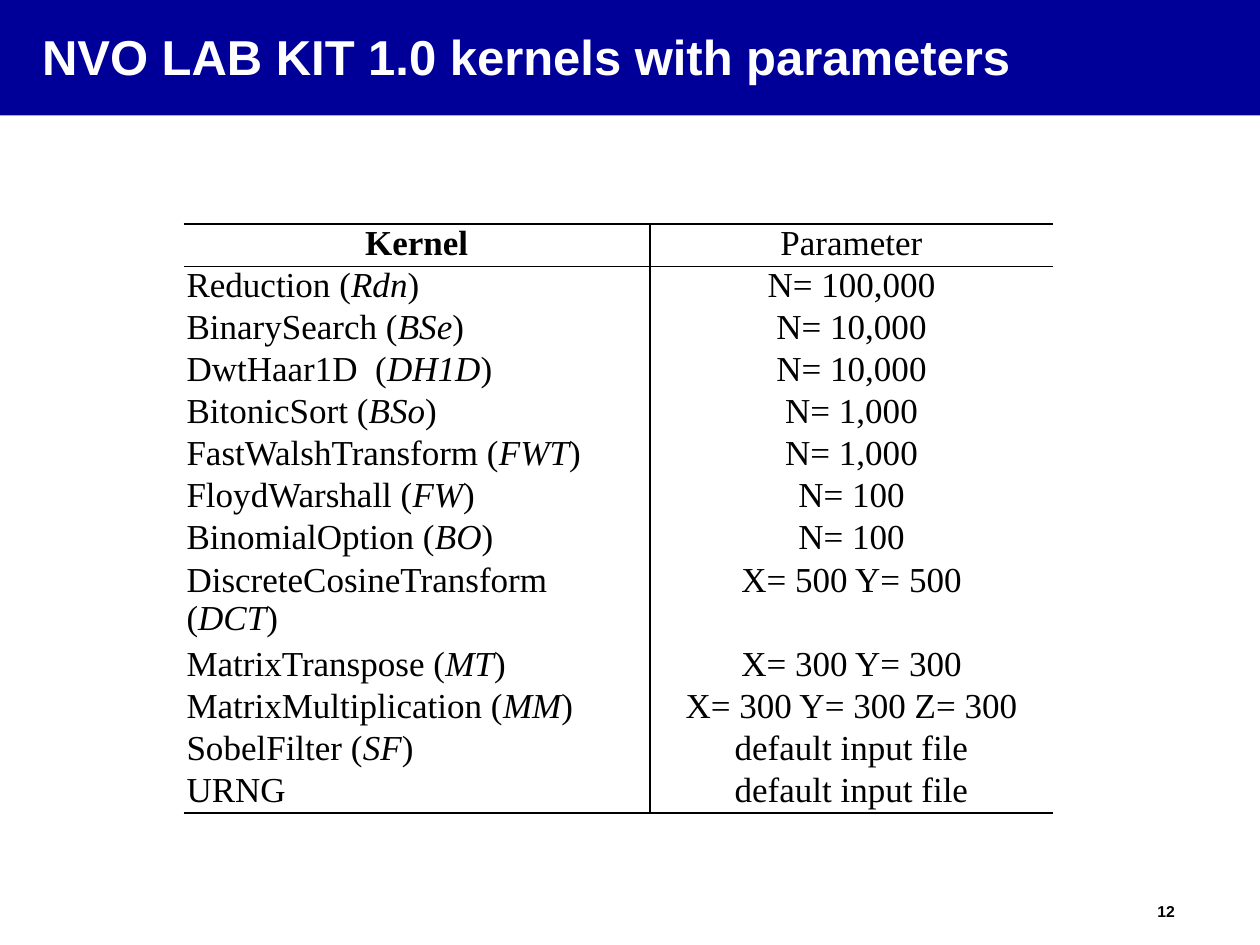
from dataclasses import dataclass

import pptx
import pptx.dml.color
import pptx.enum.shapes
import pptx.enum.text
import pptx.oxml.ns
import pptx.util
from lxml import etree
from pptx.util import Cm

ALIGN = pptx.enum.text.PP_ALIGN
MIDDLE = pptx.enum.text.MSO_ANCHOR.MIDDLE


@dataclass(frozen=True)
class Theme:
    navy: str = "000099"
    white: str = "FFFFFF"
    black: str = "000000"
    sans: str = "Arial"
    serif: str = "Times New Roman"
    title_size: float = 28
    table_size: float = 20
    number_size: float = 9
    thin: float = 1
    thick: float = 1.5


THEME = Theme()

HEADER = ("Kernel", "Parameter")
# Kernel name with its trailing gap, abbreviation, parameter
KERNELS = [
    ("Reduction ", "Rdn", "N= 100,000"),
    ("BinarySearch ", "BSe", "N= 10,000"),
    ("DwtHaar1D  ", "DH1D", "N= 10,000"),
    ("BitonicSort ", "BSo", "N= 1,000"),
    ("FastWalshTransform ", "FWT", "N= 1,000"),
    ("FloydWarshall ", "FW", "N= 100"),
    ("BinomialOption ", "BO", "N= 100"),
    ("DiscreteCosineTransform ", "DCT", "X= 500 Y= 500"),
    ("MatrixTranspose ", "MT", "X= 300 Y= 300"),
    ("MatrixMultiplication ", "MM", "X= 300 Y= 300 Z= 300"),
    ("SobelFilter ", "SF", "default input file"),
    ("URNG", "", "default input file"),
]
TWO_LINE_KERNEL = "DCT"


def rgb(value):
    return pptx.dml.color.RGBColor.from_string(value)


def write(para, text, *, size, font, color=THEME.black, bold=False,
          italic=False, align=ALIGN.LEFT, spacing=None):
    """Append one formatted span to a paragraph."""
    para.alignment = align
    if spacing:
        para.line_spacing = spacing
    span = para.add_run()
    span.text = text
    span.font.size = pptx.util.Pt(size)
    span.font.name = font
    span.font.bold = bold
    span.font.italic = italic
    span.font.color.rgb = rgb(color)


def add_label(page, box, text, *, wrap=True, **style):
    frame = page.shapes.add_textbox(*box).text_frame
    frame.word_wrap = wrap
    frame.vertical_anchor = MIDDLE
    frame.margin_left = frame.margin_right = Cm(0.15)
    frame.margin_top = frame.margin_bottom = Cm(0.05)
    write(frame.paragraphs[0], text, font=THEME.sans, bold=True, **style)


def add_title_band(page, box, text):
    left, top, width, height = box
    band = page.shapes.add_shape(
        pptx.enum.shapes.MSO_SHAPE.RECTANGLE, *box)
    band.shadow.inherit = False
    band.fill.solid()
    band.fill.fore_color.rgb = rgb(THEME.navy)
    band.line.fill.background()
    label_box = (left + Cm(0.7), top + Cm(0.63), width - Cm(1.6), Cm(1.17))
    add_label(page, label_box, text, size=THEME.title_size,
              color=THEME.white, spacing=0.87)


def set_borders(cell, widths):
    """Draw the sides named in widths (L, R, T, B) and clear the others."""
    props = cell._tc.get_or_add_tcPr()
    for index, side in enumerate("LRTB"):
        line = etree.Element(pptx.oxml.ns.qn(f"a:ln{side}"))
        props.insert(index, line)
        if side in widths:
            line.set("w", str(int(pptx.util.Pt(widths[side]))))
            fill = etree.SubElement(line, pptx.oxml.ns.qn("a:solidFill"))
            etree.SubElement(fill, pptx.oxml.ns.qn("a:srgbClr"),
                             val=THEME.black)
        else:
            etree.SubElement(line, pptx.oxml.ns.qn("a:noFill"))


def cell_borders(row, column, last_row):
    """Rules at the top, below the header, at the bottom, between columns."""
    widths = {"R" if column == 0 else "L": THEME.thin}
    if row < 2:
        widths["T"] = THEME.thick if row == 0 else THEME.thin
    if row == 0:
        widths["B"] = THEME.thin
    elif row == last_row:
        widths["B"] = THEME.thick
    return widths


def format_cells(table):
    last_row = len(table.rows) - 1
    for row in range(last_row + 1):
        for column in range(2):
            cell = table.cell(row, column)
            cell.margin_left = cell.margin_right = Cm(0.06)
            cell.margin_top = cell.margin_bottom = 0
            cell.fill.background()
            set_borders(cell, cell_borders(row, column, last_row))


def add_kernel_table(page, box):
    left, top, width, height = box
    table = page.shapes.add_table(len(KERNELS) + 1, 2, *box).table
    table.first_row = table.horz_banding = False
    table.columns[0].width = Cm(9.4)
    table.columns[1].width = width - Cm(9.4)
    line_height = height // (len(KERNELS) + 2)
    for row in table.rows:
        row.height = line_height
    format_cells(table)

    style = {"size": THEME.table_size, "font": THEME.serif}
    for column, heading in enumerate(HEADER):
        write(table.cell(0, column).text_frame.paragraphs[0], heading,
              bold=column == 0, align=ALIGN.CENTER, **style)
    for row, (name, short, parameter) in enumerate(KERNELS, start=1):
        para = table.cell(row, 0).text_frame.paragraphs[0]
        write(para, name + "(" if short else name, **style)
        if short:
            write(para, short, italic=True, **style)
            write(para, ")", **style)
        if short == TWO_LINE_KERNEL:
            table.rows[row].height = 2 * line_height
        write(table.cell(row, 1).text_frame.paragraphs[0], parameter,
              align=ALIGN.CENTER, **style)


def main():
    deck = pptx.Presentation()
    deck.slide_width, deck.slide_height = Cm(25.4), Cm(19.05)
    page = deck.slides.add_slide(deck.slide_layouts[6])
    add_title_band(page, (0, 0, deck.slide_width, Cm(2.33)),
                   "NVO LAB KIT 1.0 kernels with parameters")
    add_label(page, (Cm(23.18), Cm(18.14), Cm(0.95), Cm(0.48)), "12",
              wrap=False, size=THEME.number_size, spacing=0.97)
    add_kernel_table(page, (Cm(3.7), Cm(4.52), Cm(17.53), Cm(11.88)))
    deck.save("out.pptx")


if __name__ == "__main__":
    main()
